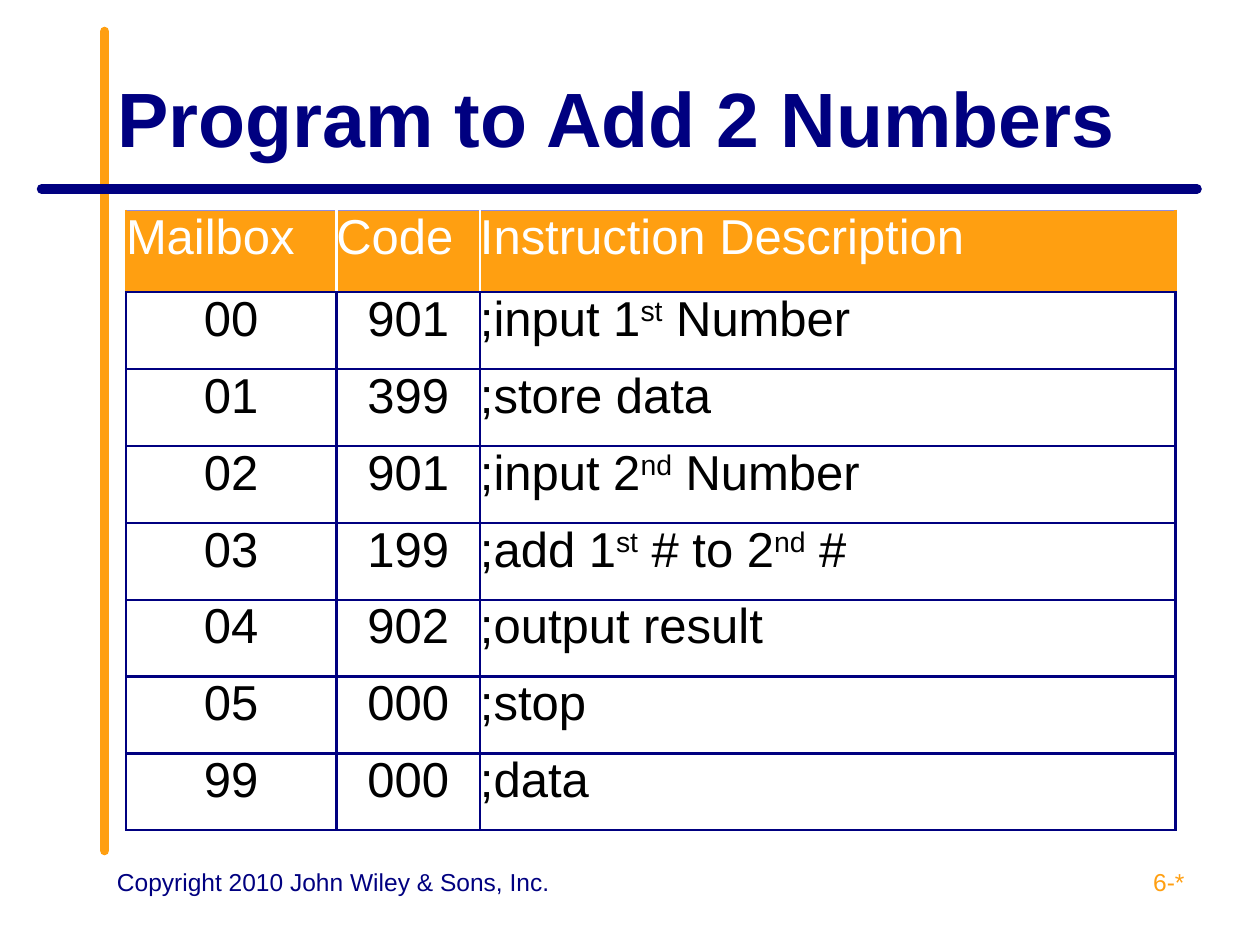
"""Build the slide listing a program that adds two numbers."""
from dataclasses import dataclass

from lxml.etree import SubElement
from pptx import Presentation
from pptx.dml.color import RGBColor
from pptx.enum.shapes import MSO_CONNECTOR as Connector
from pptx.enum.text import MSO_ANCHOR as Anchor, PP_ALIGN as Align
from pptx.oxml.ns import qn
from pptx.util import Inches, Pt

NAVY = RGBColor(0x00, 0x00, 0x80)
ORANGE = RGBColor(0xFF, 0x9F, 0x11)
LAVENDER = RGBColor(0x8C, 0x8C, 0xE2)
WHITE = RGBColor(0xFF, 0xFF, 0xFF)
BLACK = RGBColor(0x00, 0x00, 0x00)

HEADINGS = ("Mailbox", "Code", "Instruction Description")
INSTRUCTIONS = (
    ("00", "901", ";input 1^st^ Number"),
    ("01", "399", ";store data"),
    ("02", "901", ";input 2^nd^ Number"),
    ("03", "199", ";add 1^st^ # to 2^nd^ #"),
    ("04", "902", ";output result"),
    ("05", "000", ";stop"),
    ("99", "000", ";data"),
)
COLUMN_WIDTHS = (1.67, 1.14, 5.52)
HEADING_HEIGHT, INSTRUCTION_HEIGHT = 0.65, 0.61


@dataclass(frozen=True)
class Rule:
    start: tuple[float, float]
    end: tuple[float, float]
    color: RGBColor


@dataclass(frozen=True)
class Footer:
    text: str
    left: float
    width: float
    color: RGBColor
    align: Align


RULES = (
    Rule((0.83, 6.75), (0.83, 0.25), ORANGE),
    Rule((9.5, 1.5), (0.33, 1.5), NAVY),
)
FOOTERS = (
    Footer("Copyright 2010 John Wiley & Sons, Inc.", 0.83, 3.67, NAVY, Align.LEFT),
    Footer("6-*", 7.17, 2.33, ORANGE, Align.RIGHT),
)


def set_values(target, values: dict) -> None:
    """Set each named attribute on the target."""
    for name, value in values.items():
        setattr(target, name, value)


def style_font(font, size: float, color: RGBColor, bold: bool = False) -> None:
    """Apply the slide's typeface with a size, colour and weight."""
    set_values(font, {"name": "Arial", "size": Pt(size), "bold": bold})
    font.color.rgb = color


def draw_rule(slide, rule: Rule) -> None:
    """Draw a thick round-ended line."""
    ends = [Inches(value) for value in rule.start + rule.end]
    connector = slide.shapes.add_connector(Connector.STRAIGHT, *ends)
    connector.line.color.rgb = rule.color
    connector.line.width = Pt(5.5)
    connector.line._get_or_add_ln().set("cap", "rnd")
    SubElement(connector._element.spPr, qn("a:effectLst"))


def draw_footer(slide, footer: Footer) -> None:
    """Draw one line of footer text."""
    box = slide.shapes.add_textbox(
        Inches(footer.left), Inches(6.83), Inches(footer.width), Inches(0.52))
    box.text_frame.word_wrap = True
    paragraph = box.text_frame.paragraphs[0]
    paragraph.alignment = footer.align
    run = paragraph.add_run()
    run.text = footer.text
    style_font(run.font, 14, footer.color)


def draw_title(slide, text: str) -> None:
    """Place and format the title placeholder."""
    title = slide.shapes.title
    set_values(title, {"left": Inches(0.83), "top": Inches(0.3),
                       "width": Inches(8.67), "height": Inches(1.25)})
    title.text_frame.text = text
    set_values(title.text_frame, {"vertical_anchor": Anchor.MIDDLE, "word_wrap": True})
    paragraph = title.text_frame.paragraphs[0]
    paragraph.alignment = Align.LEFT
    style_font(paragraph.runs[0].font, 44, NAVY, True)


def set_border(cell, side: str, color: RGBColor, width: float) -> None:
    """Add one cell border."""
    border = SubElement(cell._tc.get_or_add_tcPr(), qn(f"a:ln{side}"), w=str(Pt(width)))
    fill = SubElement(border, qn("a:solidFill"))
    SubElement(fill, qn("a:srgbClr"), val=str(color))


def fill_cell(cell, text: str, color: RGBColor, align: Align) -> None:
    """Write a cell, raising the parts between carets."""
    set_values(cell, dict.fromkeys(
        ("margin_left", "margin_right", "margin_top", "margin_bottom"), 0))
    paragraph = cell.text_frame.paragraphs[0]
    paragraph.alignment = align
    for index, part in enumerate(text.split("^")):
        run = paragraph.add_run()
        run.text = part
        style_font(run.font, 28, color)
        if index % 2:
            run._r.get_or_add_rPr().set("baseline", "30000")


def draw_program(slide) -> None:
    """Draw the table of headings and instructions."""
    rows = (HEADINGS, *INSTRUCTIONS)
    heights = [HEADING_HEIGHT] + [INSTRUCTION_HEIGHT] * len(INSTRUCTIONS)
    program = slide.shapes.add_table(
        len(rows), len(HEADINGS), Inches(1), Inches(1.67),
        Inches(sum(COLUMN_WIDTHS)), Inches(sum(heights))).table
    set_values(program, {"first_row": False, "horz_banding": False})
    for column, width in zip(program.columns, COLUMN_WIDTHS):
        column.width = Inches(width)
    last = len(HEADINGS) - 1
    for r, (row, height) in enumerate(zip(rows, heights)):
        program.rows[r].height = Inches(height)
        for c, text in enumerate(row):
            cell = program.cell(r, c)
            heading = r == 0
            align = Align.LEFT if heading or c == last else Align.CENTER
            fill_cell(cell, text, WHITE if heading else BLACK, align)
            borders = dict.fromkeys("LRTB", (NAVY, 1.5))
            if heading:
                borders["L"] = (WHITE if c else ORANGE, 1.5)
                borders["R"] = (WHITE if c < last else ORANGE, 1.5)
                borders["T"] = (LAVENDER, 0.75)
            for side, (color, width) in borders.items():
                set_border(cell, side, color, width)
            if heading:
                cell.fill.solid()
                cell.fill.fore_color.rgb = ORANGE
            else:
                cell.fill.background()


def main() -> None:
    """Assemble and save the slide."""
    deck = Presentation()
    set_values(deck, {"slide_width": Inches(10), "slide_height": Inches(7.5)})
    slide = deck.slides.add_slide(deck.slide_layouts[5])
    for rule in RULES:
        draw_rule(slide, rule)
    for footer in FOOTERS:
        draw_footer(slide, footer)
    draw_title(slide, "Program to Add 2 Numbers")
    draw_program(slide)
    deck.save("out.pptx")


if __name__ == "__main__":
    main()
